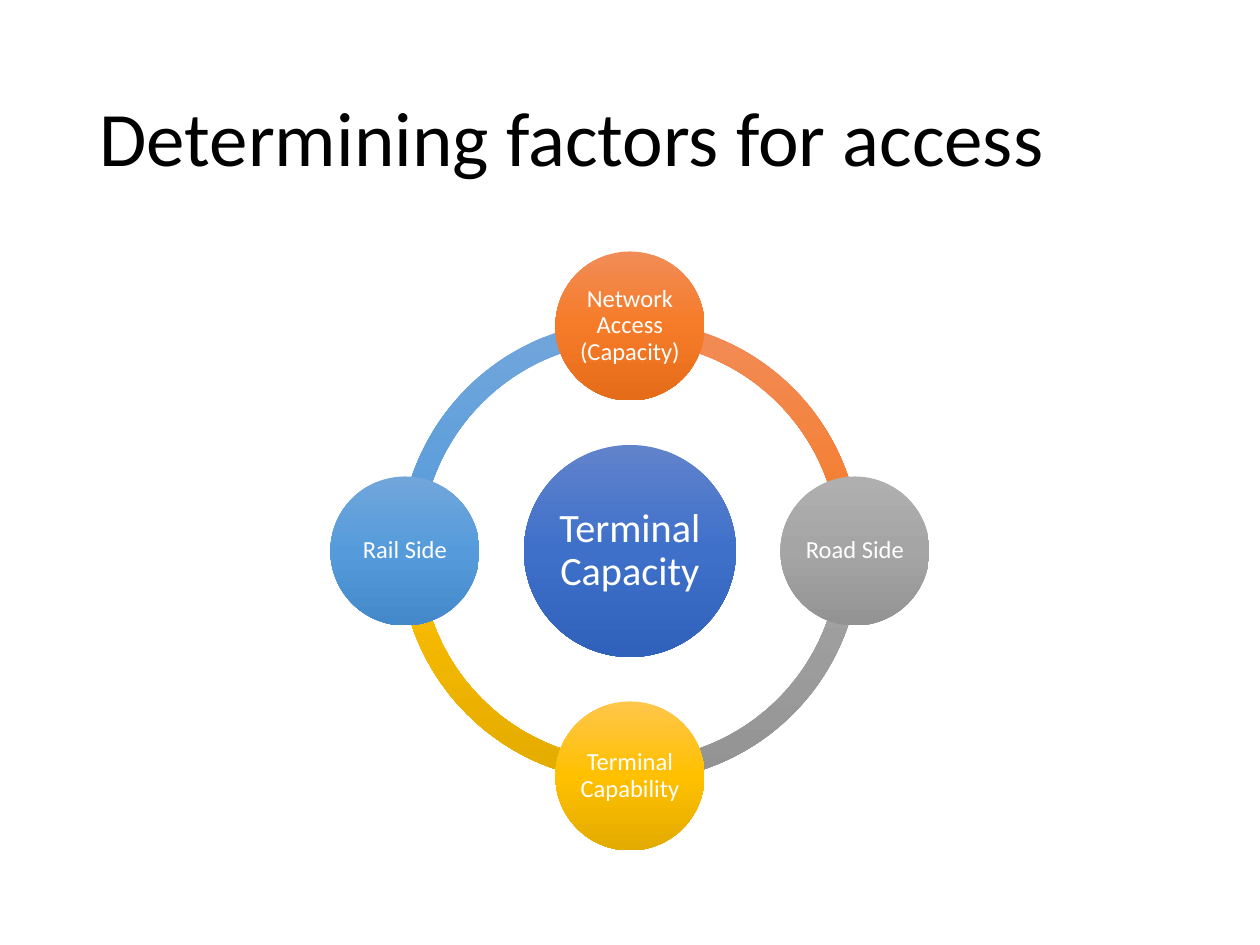
"""Builds a slide with four access factors on a ring around terminal capacity."""
from copy import deepcopy
from math import cos, radians, sin

from pptx import Presentation
from pptx.dml.color import RGBColor
from pptx.enum.shapes import MSO_SHAPE
from pptx.enum.text import MSO_ANCHOR, PP_ALIGN
from pptx.oxml.ns import qn
from pptx.util import Emu, Pt

TITLE = "Determining factors for access"
HUB = ("Terminal Capacity", ("6183CB", "3E70CA", "3062BB"))
FACTORS = [
    ("Network Access (Capacity)", ("F18C57", "F67B28", "E56C19")),
    ("Road Side", ("AFAFAF", "A5A5A5", "939393")),
    ("Terminal Capability", ("FFC64B", "FFC000", "E3AB00")),
    ("Rail Side", ("71A6DB", "559BDB", "448ACA")),
]
FONT = "Calibri"
EMU_PER_PIXEL = 914400 / 126
CENTER = (630, 551)
ORBIT, RING_SIZE, HUB_SIZE, FACTOR_SIZE = 225, 461, 212, 149
RING_THICKNESS = 0.046
ANGLE_UNITS = 0.6


def px(value):
    return Emu(round(value * EMU_PER_PIXEL))


def color(value):
    return RGBColor.from_string(value)


def write(shape, text, size, ink="FFFFFF", align=PP_ALIGN.CENTER, inset=None):
    frame = shape.text_frame
    frame.word_wrap = True
    frame.vertical_anchor = MSO_ANCHOR.MIDDLE
    if inset is not None:
        frame.margin_left = frame.margin_right = px(inset)
        frame.margin_top = frame.margin_bottom = px(inset)
    paragraph = frame.paragraphs[0]
    paragraph.alignment = align
    paragraph.line_spacing = 0.9
    run = paragraph.add_run()
    run.text = text
    run.font.name = FONT
    run.font.size = Pt(size)
    run.font.color.rgb = color(ink)


def add_round(slide, kind, center, size, shades):
    left, top = (position - size / 2 for position in center)
    shape = slide.shapes.add_shape(kind, px(left), px(top), px(size), px(size))
    shape.shadow.inherit = False
    shape.line.fill.background()
    shape.fill.gradient()
    shape.fill.gradient_angle = 270
    stop_list = next(shape._element.spPr.iter(qn("a:gsLst")))
    stop_list.append(deepcopy(stop_list[0]))
    for stop, position, shade in zip(shape.fill.gradient_stops, (0, 0.5, 1), shades):
        stop.position = position
        stop.color.rgb = color(shade)
    return shape


def add_arc(slide, index, shades):
    arc = add_round(slide, MSO_SHAPE.BLOCK_ARC, CENTER, RING_SIZE, shades)
    start = (270 + 90 * index) % 360
    arc.adjustments[0] = start * ANGLE_UNITS
    arc.adjustments[1] = (start + 90) % 360 * ANGLE_UNITS
    arc.adjustments[2] = RING_THICKNESS


def add_factor(slide, index, text, shades):
    angle = radians(90 * index - 90)
    center = (CENTER[0] + ORBIT * cos(angle), CENTER[1] + ORBIT * sin(angle))
    circle = add_round(slide, MSO_SHAPE.OVAL, center, FACTOR_SIZE, shades)
    write(circle, text, 14, inset=2)


def main():
    presentation = Presentation()
    presentation.slide_width, presentation.slide_height = px(1260), px(945)
    slide = presentation.slides.add_slide(presentation.slide_layouts[5])

    title = slide.shapes.title
    title.left, title.top, title.width, title.height = map(px, (87, 50, 1086, 183))
    write(title, TITLE, 44, ink="000000", align=PP_ALIGN.LEFT)

    for index, (_, shades) in reversed(list(enumerate(FACTORS))):
        add_arc(slide, index, shades)
    text, shades = HUB
    hub = add_round(slide, MSO_SHAPE.OVAL, CENTER, HUB_SIZE, shades)
    write(hub, text, 23, inset=4)
    for index, (text, shades) in enumerate(FACTORS):
        add_factor(slide, index, text, shades)

    presentation.save("out.pptx")


if __name__ == "__main__":
    main()
